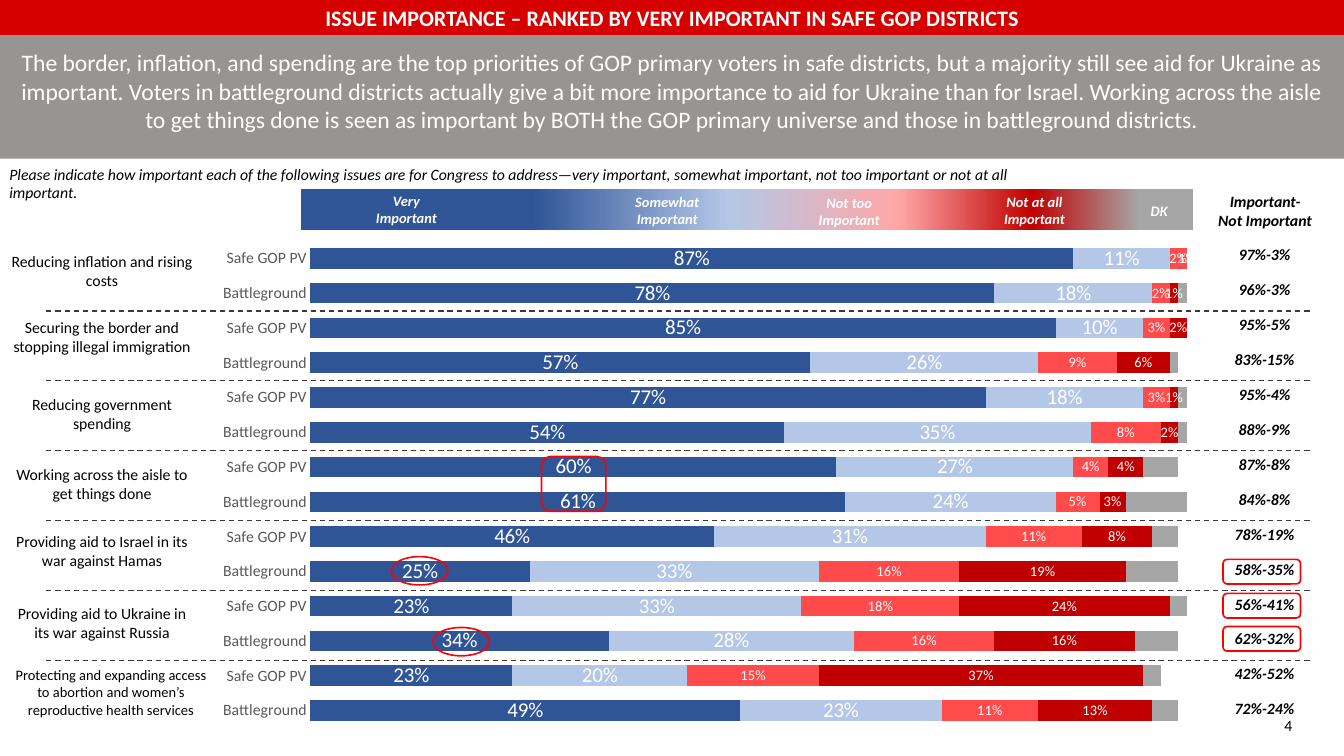
from dataclasses import dataclass

from lxml import etree
from pptx import Presentation
from pptx.chart.data import CategoryChartData
from pptx.dml.color import RGBColor
from pptx.enum.chart import XL_CHART_TYPE, XL_LABEL_POSITION, XL_TICK_MARK
from pptx.enum.dml import MSO_LINE
from pptx.enum.shapes import MSO_CONNECTOR, MSO_SHAPE
from pptx.enum.text import MSO_AUTO_SIZE, PP_ALIGN
from pptx.oxml import parse_xml
from pptx.oxml.ns import nsdecls, qn
from pptx.util import Inches, Pt


@dataclass(frozen=True)
class Theme:
    font: str = "Calibri"
    white: str = "FFFFFF"
    black: str = "000000"
    axis: str = "595959"
    title_band: str = "D60000"
    summary_band: str = "989494"
    divider: str = "3B3838"
    highlight: str = "FF0000"
    answers: tuple = ("2F5597", "B4C7E7", "FF4B4B", "C00000", "A6A6A6")
    scale: tuple = ((26, "2F5597"), (48, "B4C7E7"), (67, "FFA7A7"), (82, "C00000"), (94, "A6A6A6"))
    title: float = 16.8
    summary: float = 18
    body: float = 12
    small: float = 11
    label_sizes: tuple = (16, 16, 11, 11, None)


class SlideBuilder:
    def __init__(self, slide, theme):
        self.slide, self.theme = slide, theme

    def text(self, box, words, size, color=None, bold=False, italic=False, align=PP_ALIGN.CENTER):
        frame = self.slide.shapes.add_textbox(*map(Inches, box)).text_frame
        frame.word_wrap = True
        frame.auto_size = MSO_AUTO_SIZE.SHAPE_TO_FIT_TEXT
        frame.text = words
        for paragraph in frame.paragraphs:
            paragraph.alignment = align
            self.style(paragraph.font, size, color or self.theme.black)
            paragraph.font.bold, paragraph.font.italic = bold, italic

    def style(self, font, size, color):
        font.name, font.size = self.theme.font, Pt(size)
        font.color.rgb = RGBColor.from_string(color)

    def band(self, box, color):
        band = self.slide.shapes.add_shape(MSO_SHAPE.RECTANGLE, *map(Inches, box))
        band.shadow.inherit = False
        band.fill.solid()
        band.fill.fore_color.rgb = RGBColor.from_string(color)
        band.line.fill.background()
        return band

    def gradient_band(self, box, stops):
        band = self.band(box, stops[0][1])
        stop_xml = "".join(
            f'<a:gs pos="{position * 1000}"><a:srgbClr val="{color}"/></a:gs>' for position, color in stops)
        gradient = parse_xml(f'<a:gradFill {nsdecls("a")} rotWithShape="1"><a:gsLst>{stop_xml}</a:gsLst>'
                             '<a:lin ang="0" scaled="0"/></a:gradFill>')
        properties = band._element.spPr
        properties.replace(properties.find(qn("a:solidFill")), gradient)

    def outline(self, kind, box):
        ring = self.slide.shapes.add_shape(kind, *map(Inches, box))
        ring.shadow.inherit = False
        ring.fill.background()
        ring.line.color.rgb = RGBColor.from_string(self.theme.highlight)
        ring.line.width = Pt(1.25)

    def divider(self, left, right, y):
        rule = self.slide.shapes.add_connector(
            MSO_CONNECTOR.STRAIGHT, Inches(left), Inches(y), Inches(right), Inches(y))
        rule.line.color.rgb = RGBColor.from_string(self.theme.divider)
        rule.line.width = Pt(1)
        rule.line.dash_style = MSO_LINE.DASH
        etree.SubElement(rule._element.spPr, qn("a:effectLst"))

    def stacked_bars(self, box, categories, series, plot_area):
        data = CategoryChartData(number_format="0%")
        data.categories = categories
        for number, values in enumerate(series, 1):
            data.add_series(f"Series {number}", values)
        chart = self.slide.shapes.add_chart(
            XL_CHART_TYPE.BAR_STACKED, *map(Inches, box), data).chart
        chart.has_legend = chart.has_title = False
        self.style(chart.font, 10, self.theme.black)

        categories_axis, share_axis = chart.category_axis, chart.value_axis
        categories_axis.major_tick_mark = XL_TICK_MARK.NONE
        categories_axis.format.line.fill.background()
        self.style(categories_axis.tick_labels.font, self.theme.body, self.theme.axis)
        share_axis.minimum_scale, share_axis.maximum_scale = 0, 1
        share_axis.has_major_gridlines = share_axis.visible = False

        plot = chart.plots[0]
        plot.gap_width, plot.overlap, plot.vary_by_categories = 70, 100, False
        for answer, color, size in zip(plot.series, self.theme.answers, self.theme.label_sizes):
            answer.format.fill.solid()
            answer.format.fill.fore_color.rgb = RGBColor.from_string(color)
            if size:
                labels = answer.data_labels
                labels.show_value = True
                labels.position = XL_LABEL_POSITION.CENTER
                labels.number_format, labels.number_format_is_linked = "0%", False
                self.style(labels.font, size, self.theme.white)

        # Fixed inner plot area
        area = chart._chartSpace.chart.plotArea
        for old in area.findall(qn("c:layout")):
            area.remove(old)
        places = "".join(f'<c:{key} val="{value}"/>' for key, value in zip("xywh", plot_area))
        area.insert(0, parse_xml(
            f'<c:layout {nsdecls("c")}><c:manualLayout><c:layoutTarget val="inner"/>'
            f'<c:xMode val="edge"/><c:yMode val="edge"/>{places}</c:manualLayout></c:layout>'))


# Issue, label top, then (shares per answer, net) for safe GOP and battleground voters
ISSUES = [
    ("Reducing inflation and rising costs", 2.62,
     ((87, 11, 2, 1, 0), "97%-3%"), ((78, 18, 2, 1, 1), "96%-3%")),
    ("Securing the border and stopping illegal immigration", 3.31,
     ((85, 10, 3, 2, 0), "95%-5%"), ((57, 26, 9, 6, 1), "83%-15%")),
    ("Reducing government spending", 4.13,
     ((77, 18, 3, 1, 1), "95%-4%"), ((54, 35, 8, 2, 2), "88%-9%")),
    ("Working across the aisle to get things done", 4.87,
     ((60, 27, 4, 4, 4), "87%-8%"), ((61, 24, 5, 3, 7), "84%-8%")),
    ("Providing aid to Israel in its war against Hamas", 5.58,
     ((46, 31, 11, 8, 3), "78%-19%"), ((25, 33, 16, 19, 6), "58%-35%")),
    ("Providing aid to Ukraine in its war against Russia", 6.34,
     ((23, 33, 18, 24, 2), "56%-41%"), ((34, 28, 16, 16, 5), "62%-32%")),
    ("Protecting and expanding access to abortion and women’s reproductive health services", 7,
     ((23, 20, 15, 37, 2), "42%-52%"), ((49, 23, 11, 13, 3), "72%-24%")),
]
SCALE_HEADINGS = [
    ("Very Important", (3.74, 1.98, 1.12, 0.47)),
    ("Somewhat\nImportant", (5.95, 1.99, 2.22, 0.48)),
    ("Not too Important", (8.36, 2, 1.25, 0.48)),
    ("Not at all Important", (10.3, 1.99, 1.29, 0.47)),
    ("DK", (11.81, 2.09, 0.91, 0.25)),
]
NET_TOP, NET_PITCH = 2.54, 0.37
DIVIDER_TOP, DIVIDER_PITCH = 3.29, 0.74


def main():
    theme = Theme()
    presentation = Presentation()
    presentation.slide_width, presentation.slide_height = Inches(14.22), Inches(8)
    page = SlideBuilder(presentation.slides.add_slide(presentation.slide_layouts[6]), theme)

    # Title, summary and question
    page.band((0, 0, 14.22, 1.68), theme.summary_band)
    page.band((0, 0, 14.22, 0.37), theme.title_band)
    page.text((13.49, 7.53, 0.56, 0.3), "4", theme.body, align=PP_ALIGN.LEFT)
    page.text((0, 0, 14.22, 0.39), "ISSUE IMPORTANCE – RANKED BY VERY IMPORTANT IN SAFE GOP DISTRICTS",
              theme.title, theme.white, bold=True)
    page.text((0, 0.46, 14.22, 1.01),
              "The border, inflation, and spending are the top priorities of GOP primary voters in safe "
              "districts, but a majority still see aid for Ukraine as important. Voters in battleground "
              "districts actually give a bit more importance to aid for Ukraine than for Israel. Working "
              "across the aisle to get things done is seen as important by BOTH the GOP primary universe "
              "and those in battleground districts.", theme.summary, theme.white)
    page.text((0, 1.69, 11.52, 0.3),
              "Please indicate how important each of the following issues are for Congress to address—very "
              "important, somewhat important, not too important or not at all important.",
              theme.body, italic=True, align=PP_ALIGN.LEFT)

    # Answer scale
    page.gradient_band((3.18, 2, 9.44, 0.43), theme.scale)
    for heading, box in SCALE_HEADINGS:
        page.text(box, heading, theme.small, theme.white, bold=True, italic=True)
    page.text((12.74, 1.98, 1.29, 0.5), "Important-\nNot Important", theme.body, bold=True, italic=True)

    # Bars, which the chart stacks from the bottom up
    rows = [row for issue in ISSUES for row in issue[2:]]
    shares = zip(*(values for values, _ in reversed(rows)))
    page.stacked_bars((2.12, 2.3, 10.59, 5.7), ["Battleground", "Safe GOP PV"] * len(ISSUES),
                      [[share / 100 for share in answer] for answer in shares],
                      (0.11, 0.044, 0.876, 0.904))

    # Issue labels and dividers
    for number, (issue, top, *_) in enumerate(ISSUES):
        if number < len(ISSUES) - 1:
            page.text((0.02, top, 2.12, 0.5), issue, theme.body)
            page.divider(0.49, 13.89, DIVIDER_TOP + number * DIVIDER_PITCH)
        else:
            page.text((0.03, top, 2.29, 0.66), issue, theme.small)

    # Net importance
    for number, (_, net) in enumerate(rows):
        page.text((12.92, NET_TOP + number * NET_PITCH, 0.92, 0.3), net,
                  theme.body, bold=True, italic=True)

    # Highlights
    for top in (5.92, 6.28, 6.63):
        page.outline(MSO_SHAPE.ROUNDED_RECTANGLE, (12.94, top, 0.82, 0.26))
    for left, top in ((4.58, 6.64), (4.14, 5.89)):
        page.outline(MSO_SHAPE.OVAL, (left, top, 0.6, 0.3))
    page.outline(MSO_SHAPE.ROUNDED_RECTANGLE, (5.73, 4.83, 0.68, 0.58))

    presentation.save("out.pptx")


if __name__ == "__main__":
    main()
